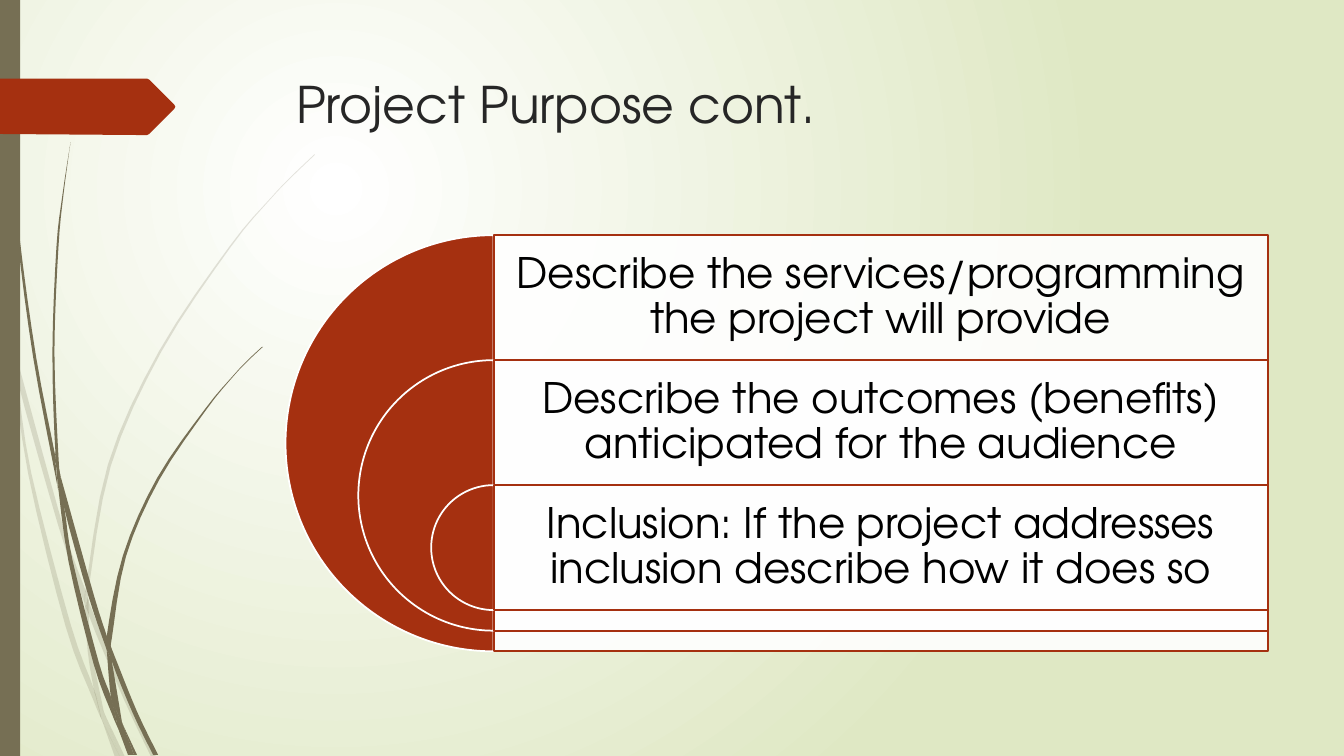
from lxml import etree
from pptx import Presentation
from pptx.dml.color import RGBColor
from pptx.enum.shapes import MSO_SHAPE
from pptx.enum.text import MSO_ANCHOR, PP_ALIGN
from pptx.oxml.ns import qn
from pptx.util import Pt

RECTANGLE, PIE = MSO_SHAPE.RECTANGLE, MSO_SHAPE.PIE
MIDDLE, TOP = MSO_ANCHOR.MIDDLE, MSO_ANCHOR.TOP
CENTER, LEFT = PP_ALIGN.CENTER, PP_ALIGN.LEFT

FONT = "TeX Gyre Adventor"
RED, OLIVE, WHITE, PALE_GREEN = "A53010", "766F54", "FFFFFF", "DFE8C4"
BLACK, DARK_GREY = "000000", "262626"

TITLE = "Project Purpose cont."
PURPOSES = [
    "Describe the services/programming the project will provide",
    "Describe the outcomes (benefits) anticipated for the audience",
    "Inclusion: If the project addresses inclusion describe how it does so",
]

# Grass and arrow points lie on a grid of 0.72 pt.
GRID = 0.72
CURVE_STEPS = 4
# Each blade section is a pair of smooth edges that together close its outline.
PALE_GRASS = [
    ([(11, 350), (9, 322), (0, 282)], [(0, 299), (10, 344), (11, 350)]),
    ([(14, 345), (17, 376), (58, 522), (84, 599)],
     [(85, 586), (62, 520), (14, 345)]),
    ([(88, 596), (88, 610), (123, 694), (150, 751)],
     [(155, 751), (127, 692), (92, 607), (88, 596)]),
    ([(119, 751), (124, 751)], [(105, 711), (119, 751)]),
    ([(101, 714), (93, 683), (70, 619), (31, 469), (17, 376), (11, 350)],
     [(11, 350), (28, 470), (65, 621), (92, 693), (101, 714)]),
    ([(84, 599), (87, 646), (93, 683), (96, 692), (105, 711)],
     [(103, 706), (91, 646), (88, 610), (88, 608), (84, 599)]),
    ([(88, 596), (88, 584), (110, 462), (160, 349), (229, 245), (268, 198),
      (290, 175), (312, 154)],
     [(312, 153), (289, 175), (268, 197), (228, 244), (158, 348), (107, 461),
      (85, 584), (85, 586)]),
    ([(101, 714), (114, 751)], [(119, 751), (101, 714)]),
    ([(88, 608), (88, 610), (88, 596)], [(85, 586), (84, 599), (88, 608)]),
    ([(93, 683), (99, 707), (101, 714), (119, 751)],
     [(105, 711), (96, 692), (93, 683)]),
]
DARK_GRASS = [
    ([(4, 0), (3, 0), (4, 48), (7, 110), (17, 233), (33, 355), (56, 477),
      (57, 481)],
     [(55, 457), (55, 453), (36, 355), (19, 232), (8, 109), (5, 48), (4, 0)]),
    ([(60, 472), (64, 505), (88, 592), (106, 645)],
     [(106, 633), (106, 631), (93, 590), (60, 472)]),
    ([(110, 641), (111, 656), (132, 708), (152, 749)],
     [(157, 749), (136, 706), (113, 649), (110, 641)]),
    ([(57, 477), (68, 557), (93, 659), (111, 708), (117, 722)],
     [(116, 717), (110, 691), (98, 657), (72, 556), (64, 505), (57, 477)]),
    ([(60, 472), (58, 453), (54, 349), (58, 245), (63, 193), (70, 141)],
     [(70, 141), (62, 193), (56, 245), (52, 349), (55, 449), (60, 472)]),
    ([(133, 749), (136, 749)], [(122, 719), (133, 749)]),
    ([(57, 477), (64, 505), (60, 472)], [(60, 472), (55, 449), (55, 453), (57, 477)]),
    ([(110, 641), (111, 633), (125, 552), (158, 476), (205, 406), (231, 374),
      (245, 359), (261, 344)],
     [(260, 344), (245, 358), (231, 373), (204, 405), (156, 474), (122, 551),
      (106, 631), (110, 641)]),
    ([(117, 722), (127, 749)], [(131, 749), (117, 722)]),
    ([(106, 645), (110, 691), (116, 706), (122, 719)],
     [(121, 716), (111, 656), (109, 651), (106, 645)]),
    ([(106, 631), (106, 633), (106, 645)],
     [(109, 651), (111, 656), (110, 641), (106, 631)]),
    ([(110, 691), (116, 717), (117, 722), (130, 749)],
     [(133, 749), (122, 719), (116, 706), (110, 691)]),
]
ARROW = [(0, 78), (146, 78), (148, 79), (173, 104), (174, 106), (173, 108),
         (148, 133), (146, 134), (136, 134), (0, 133)]


def rgb(color):
    return RGBColor.from_string(color)


def paint(shape, color, opacity=100, outline=None):
    shape.shadow.inherit = False
    shape.fill.solid()
    shape.fill.fore_color.rgb = rgb(color)
    if opacity < 100:
        tint = shape.element.spPr.find(".//" + qn("a:srgbClr"))
        etree.SubElement(tint, qn("a:alpha"), val=str(opacity * 1000))
    if outline:
        shape.line.color.rgb = rgb(outline)
        shape.line.width = Pt(1.25)
    else:
        shape.line.fill.background()


def add_outline(points, color, opacity=100):
    corners = [(Pt(x * GRID), Pt(y * GRID)) for x, y in points]
    builder = slide.shapes.build_freeform(*corners[0])
    builder.add_line_segments(corners[1:], close=True)
    paint(builder.convert_to_shape(), color, opacity)


def smooth(edge):
    """Return points along a Catmull-Rom curve through the edge."""
    padded = [edge[0], *edge, edge[-1]]
    curve = [edge[0]]
    for knots in zip(padded, padded[1:], padded[2:], padded[3:]):
        for step in range(1, CURVE_STEPS + 1):
            t = step / CURVE_STEPS
            curve.append(tuple(
                b + t * (c - a) / 2 + t**2 * (2 * a - 5 * b + 4 * c - d) / 2
                + t**3 * (3 * b - a - 3 * c + d) / 2
                for a, b, c, d in zip(*knots)))
    return curve


def add_preset(kind, left, top, width, height, color, **style):
    shape = slide.shapes.add_shape(kind, Pt(left), Pt(top), Pt(width), Pt(height))
    paint(shape, color, **style)
    return shape


def add_text(text, left, top, width, height, size, color, anchor, align, insets):
    box = slide.shapes.add_textbox(Pt(left), Pt(top), Pt(width), Pt(height))
    frame = box.text_frame
    frame.word_wrap = True
    frame.vertical_anchor = anchor
    frame.margin_left = frame.margin_right = Pt(insets[0])
    frame.margin_top = frame.margin_bottom = Pt(insets[1])
    frame.text = text
    paragraph = frame.paragraphs[0]
    paragraph.alignment = align
    font = paragraph.runs[0].font
    font.name, font.size, font.color.rgb = FONT, Pt(size), rgb(color)
    return paragraph


prs = Presentation()
prs.slide_width, prs.slide_height = Pt(960), Pt(540)
slide = prs.slides.add_slide(prs.slide_layouts[6])

# Radial background
backdrop = slide.background.fill
backdrop.gradient()
for stop, color in zip(backdrop.gradient_stops, (WHITE, PALE_GREEN)):
    stop.color.rgb = rgb(color)
linear = slide.element.find(".//" + qn("a:lin"))
radial = etree.Element(qn("a:path"), path="circle")
etree.SubElement(radial, qn("a:fillToRect"), l="50000", t="50000", r="100000", b="100000")
linear.getparent().replace(linear, radial)

# Grass, side bar and arrow
for grass, opacity in ((PALE_GRASS, 20), (DARK_GRASS, 100)):
    for rising, falling in grass:
        add_outline(smooth(rising) + smooth(falling), OLIVE, opacity)
add_preset(RECTANGLE, 0, 0, 14.4, 540, OLIVE)
add_outline(ARROW, RED)

add_text(TITLE, 204.5, 49, 702, 100.8, 36, DARK_GREY, TOP, LEFT, (7.2, 3.6))

# Nested half circles, each with a panel to its right
PANEL_LEFT, PANEL_TOP, PANEL_WIDTH = 352.6, 168, 553
ROW_HEIGHT, SHRINK = 89.25, 104
for row, purpose in enumerate(PURPOSES):
    top = PANEL_TOP + row * ROW_HEIGHT
    diameter = ROW_HEIGHT + (len(PURPOSES) - 1 - row) * SHRINK
    half_circle = add_preset(PIE, PANEL_LEFT - diameter / 2, top, diameter, diameter,
                             RED, outline=WHITE)
    half_circle.adjustments[0], half_circle.adjustments[1] = 54, 162
    add_preset(RECTANGLE, PANEL_LEFT, top, PANEL_WIDTH, diameter, WHITE,
               opacity=90, outline=RED)
    paragraph = add_text(purpose, PANEL_LEFT, top, PANEL_WIDTH, ROW_HEIGHT, 30, BLACK,
                         MIDDLE, CENTER, (9, 9))
    paragraph.line_spacing = 0.9

prs.save("out.pptx")
